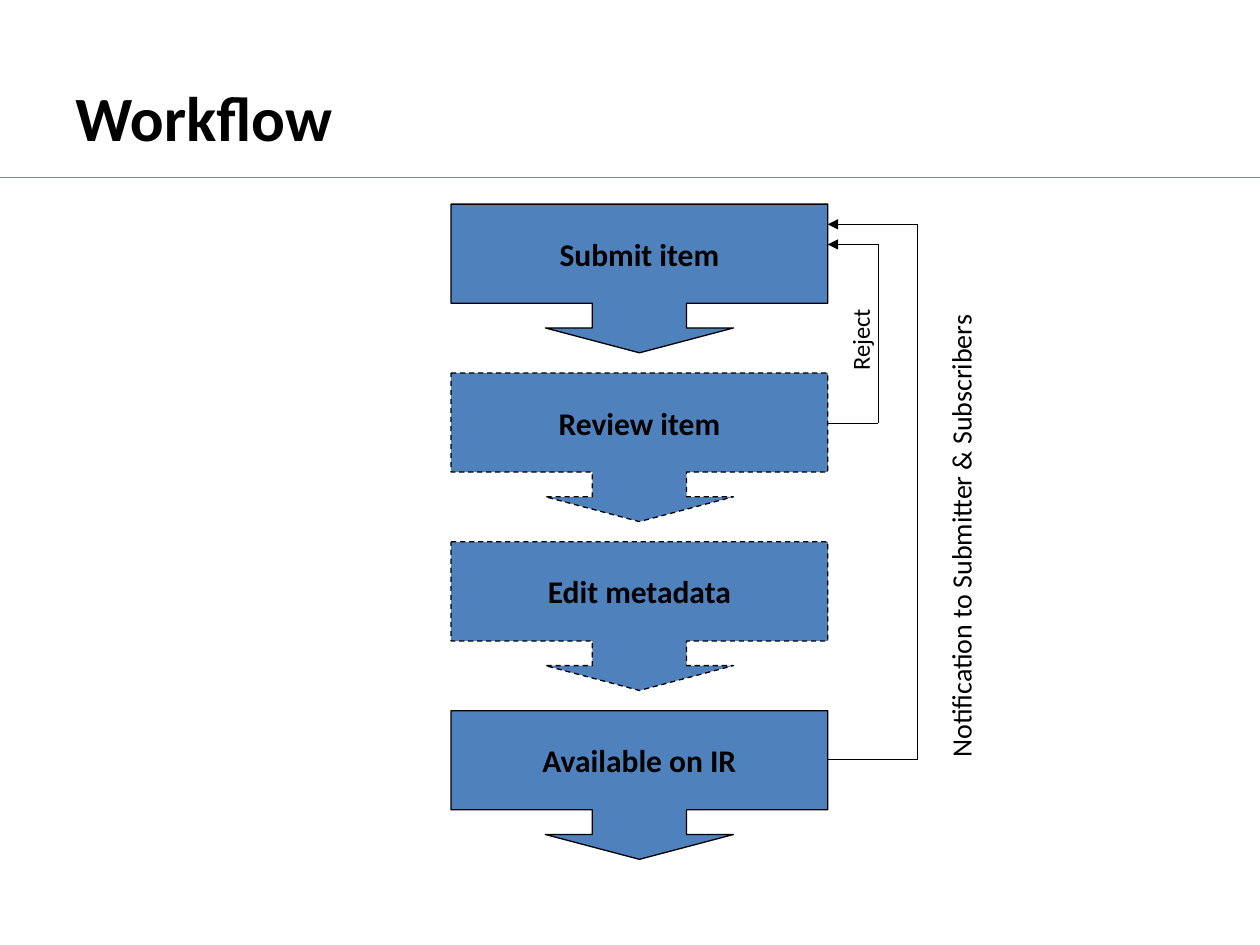
from lxml.etree import SubElement
from pptx import Presentation
from pptx.dml.color import RGBColor
from pptx.enum.dml import MSO_LINE
from pptx.enum.shapes import MSO_CONNECTOR, MSO_SHAPE
from pptx.enum.text import MSO_ANCHOR, PP_ALIGN
from pptx.oxml.ns import qn
from pptx.util import Inches, Pt

BLACK = RGBColor(0x00, 0x00, 0x00)
BLUE = RGBColor(0x4F, 0x81, 0xBD)
ORANGE = RGBColor(0xE4, 0x6C, 0x0A)
FONT = "Calibri"

STEP_LEFT, STEP_TOP = 3.58, 1.62
STEP_WIDTH, STEP_HEIGHT = 2.99, 1.18
STEP_PITCH = 1.34
STEP_RIGHT = STEP_LEFT + STEP_WIDTH
CALLOUT_ADJUSTMENTS = (0.633, 0.633, 0.167, 0.667)

# Step name, whether the step is optional (dashed outline)
STEPS = [
    ("Submit item", False),
    ("Review item", True),
    ("Edit metadata", True),
    ("Available on IR", False),
]


def add_run(paragraph, text, size, bold=False):
    run = paragraph.add_run()
    run.text = text
    run.font.name = FONT
    run.font.size = Pt(size)
    run.font.bold = bold
    run.font.color.rgb = BLACK


def add_label(slide, text, box, size, bold=False, rotation=0,
              anchor=MSO_ANCHOR.TOP):
    label = slide.shapes.add_textbox(*map(Inches, box))
    label.rotation = rotation
    label.text_frame.word_wrap = True
    label.text_frame.vertical_anchor = anchor
    add_run(label.text_frame.paragraphs[0], text, size, bold)


def add_step(slide, name, top, optional):
    step = slide.shapes.add_shape(
        MSO_SHAPE.DOWN_ARROW_CALLOUT, Inches(STEP_LEFT), Inches(top),
        Inches(STEP_WIDTH), Inches(STEP_HEIGHT))
    for index, value in enumerate(CALLOUT_ADJUSTMENTS):
        step.adjustments[index] = value
    step.shadow.inherit = False
    step.fill.solid()
    step.fill.fore_color.rgb = BLUE
    step.line.color.rgb = BLACK
    step.line.width = Pt(0.75)
    if optional:
        step.line.dash_style = MSO_LINE.DASH
    frame = step.text_frame
    frame.word_wrap = False
    frame.vertical_anchor = MSO_ANCHOR.MIDDLE
    frame.paragraphs[0].alignment = PP_ALIGN.CENTER
    add_run(frame.paragraphs[0], name, 18, bold=True)


def add_line(slide, start, end, color=BLACK, arrow=False):
    line = slide.shapes.add_connector(
        MSO_CONNECTOR.STRAIGHT, *map(Inches, (*start, *end)))
    line.line.color.rgb = color
    line.line.width = Pt(0.75)
    if arrow:
        SubElement(line.line._get_or_add_ln(), qn("a:tailEnd"),
                   type="triangle")
    SubElement(line._element.spPr, qn("a:effectLst"))


def add_return_path(slide, x, from_y, to_y):
    """Lead from a step's right side out to x and back to the first step."""
    add_line(slide, (x, from_y), (STEP_RIGHT, from_y))
    add_line(slide, (x, from_y), (x, to_y))
    add_line(slide, (x, to_y), (STEP_RIGHT, to_y), arrow=True)


def main():
    prs = Presentation()
    prs.slide_width, prs.slide_height = Inches(10), Inches(7.5)
    slide = prs.slides.add_slide(prs.slide_layouts[6])

    # Heading and rule
    add_label(slide, "Workflow", (0.5, 0.3, 9, 1.25), 36, bold=True,
              anchor=MSO_ANCHOR.MIDDLE)
    add_line(slide, (0, 1.41), (10, 1.41), ORANGE)

    # Workflow steps
    for index, (name, optional) in enumerate(STEPS):
        add_step(slide, name, STEP_TOP + index * STEP_PITCH, optional)

    # Rejection path
    add_return_path(slide, 6.97, 3.36, 1.94)
    add_label(slide, "Reject", (6.39, 2.44, 0.87, 0.33), 14, rotation=270)

    # Notification path
    add_return_path(slide, 7.28, 6.03, 1.78)
    add_label(slide, "Notification to Submitter & Subscribers",
              (5.42, 3.72, 4.41, 0.37), 16, rotation=270)

    prs.save("out.pptx")


if __name__ == "__main__":
    main()
